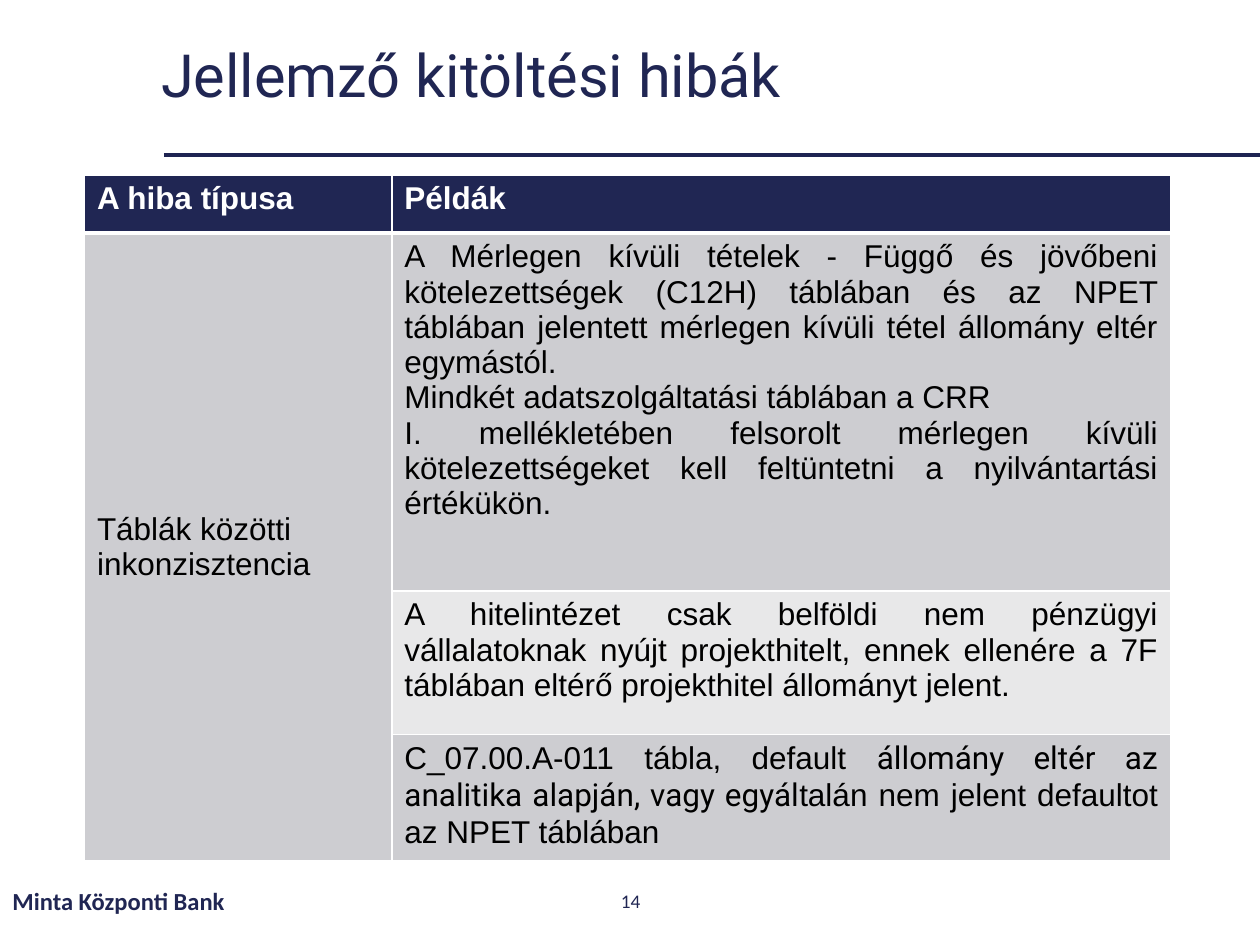
from lxml.etree import SubElement
from pptx import Presentation
from pptx.dml.color import RGBColor
from pptx.enum.shapes import MSO_CONNECTOR
from pptx.enum.text import MSO_ANCHOR, PP_ALIGN
from pptx.oxml import parse_xml
from pptx.oxml.ns import nsdecls, qn
from pptx.util import Inches, Pt

WIDE, HIGH = 10, 7.5
NAVY, RULE, WHITE, BLACK = "202653", "1E2452", "FFFFFF", "000000"
DARK, LIGHT = "CDCDD1", "E8E8E9"
COLS = (24.4, 61.8)
ROWS = (6.13, 37.87, 15.2, 12.27)
HEADS = ("A hiba típusa", "Példák")
GROUP = "Táblák közötti inkonzisztencia"
CASES = (
    (
        "A Mérlegen kívüli tételek - Függő és jövőbeni kötelezettségek (C12H) táblában és az NPET "
        "táblában jelentett mérlegen kívüli tétel állomány eltér egymástól.",
        "Mindkét adatszolgáltatási táblában a CRR",
        "I. mellékletében felsorolt mérlegen kívüli kötelezettségeket kell feltüntetni a "
        "nyilvántartási értékükön.",
    ),
    (
        "A hitelintézet csak belföldi nem pénzügyi vállalatoknak nyújt projekthitelt, ennek "
        "ellenére a 7F táblában eltérő projekthitel állományt jelent.",
    ),
    (
        (
            ("C_07.00.A-011 tábla, default ", "Arial"),
            ("állomány eltér az analitika alapján, vagy egyál", "Roboto"),
            ("talán nem jelent defaultot az NPET táblában", "Arial"),
        ),
    ),
)


def color(code):
    """Turn a hex string into a colour."""
    return RGBColor.from_string(code)


def across(share):
    """Give a percentage of the slide's width."""
    return Inches(WIDE * share / 100)


def down(share):
    """Give a percentage of the slide's height."""
    return Inches(HIGH * share / 100)


def write(frame, *lines, font="Arial", size=18, ink=BLACK, bold=False,
          align=PP_ALIGN.LEFT, lead=None):
    """Fill a frame with lines, each a string or a tuple of (text, font) runs."""
    frame.word_wrap = True
    for i, line in enumerate(lines):
        para = frame.add_paragraph() if i else frame.paragraphs[0]
        para.alignment = align
        if lead:
            para.line_spacing = lead
        for text, face in ((line, font),) if isinstance(line, str) else line:
            run = para.add_run()
            run.text = text
            run.font.name, run.font.size, run.font.bold = face, Pt(size), bold
            run.font.color.rgb = color(ink)


def label(slide, x, y, w, h, text, **style):
    """Add a text box centred on its height."""
    box = slide.shapes.add_textbox(across(x), down(y), across(w), down(h))
    box.text_frame.vertical_anchor = MSO_ANCHOR.MIDDLE
    write(box.text_frame, text, **style)


def rule(slide, x, y, end):
    """Draw a level line."""
    line = slide.shapes.add_connector(
        MSO_CONNECTOR.STRAIGHT, across(x), down(y), across(end), down(y))
    line.line.color.rgb = color(RULE)
    line.line.width = Pt(2.25)
    SubElement(line._element.spPr, qn("a:effectLst"))


def paint(cell, fill, top=1, base=1):
    """Fill a cell and give it white borders."""
    cell.fill.solid()
    cell.fill.fore_color.rgb = color(fill)
    props = cell._tc.get_or_add_tcPr()
    for i, (side, width) in enumerate((("L", 1), ("R", 1), ("T", top), ("B", base))):
        props.insert(i, parse_xml(
            f'<a:ln{side} {nsdecls("a")} w="{Pt(width)}"><a:solidFill>'
            f'<a:srgbClr val="{WHITE}"/></a:solidFill></a:ln{side}>'))


def grid(slide, x, y):
    """Add the table of error types and examples."""
    table = slide.shapes.add_table(
        len(ROWS), len(COLS), across(x), down(y), across(sum(COLS)), down(sum(ROWS))).table
    for col, share in zip(table.columns, COLS):
        col.width = across(share)
    for row, share in zip(table.rows, ROWS):
        row.height = down(share)
    for i, head in enumerate(HEADS):
        paint(table.cell(0, i), NAVY, base=3)
        write(table.cell(0, i).text_frame, head, ink=WHITE, bold=True)
    for i, case in enumerate(CASES, 1):
        top = 3 if i == 1 else 1
        paint(table.cell(i, 0), DARK, top)
        paint(table.cell(i, 1), DARK if i % 2 else LIGHT, top)
        write(table.cell(i, 1).text_frame, *case, align=PP_ALIGN.JUSTIFY)
    group = table.cell(1, 0)
    group.merge(table.cell(len(CASES), 0))
    group.vertical_anchor = MSO_ANCHOR.MIDDLE
    write(group.text_frame, GROUP)


def main():
    """Build and save the slide."""
    deck = Presentation()
    deck.slide_width, deck.slide_height = Inches(WIDE), Inches(HIGH)
    slide = deck.slides.add_slide(deck.slide_layouts[6])
    rule(slide, 13, 16.4, 100)
    label(slide, 11.8, 2.67, 81.9, 11.2, "Jellemző kitöltési hibák",
          font="Roboto", size=34, ink=NAVY, align=PP_ALIGN.JUSTIFY, lead=0.9)
    grid(slide, 6.7, 18.53)
    label(slide, 0, 92.67, 33.8, 5.33, "Minta Központi Bank",
          font="Calibri", size=14, ink=NAVY, bold=True)
    label(slide, 38.8, 92.67, 22.5, 5.33, "14",
          font="Calibri", size=11, ink=NAVY, align=PP_ALIGN.CENTER)
    deck.save("out.pptx")


if __name__ == "__main__":
    main()
